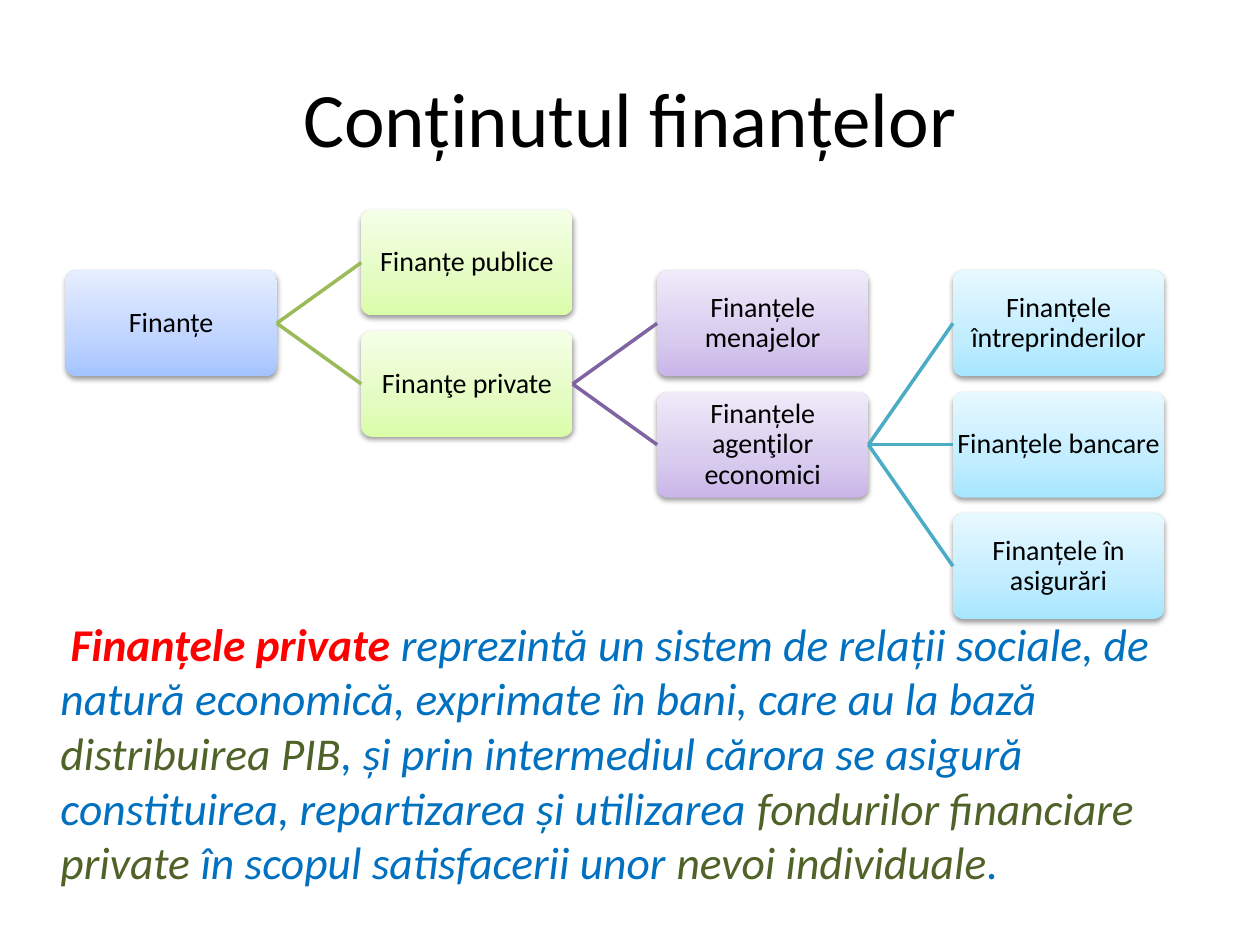
from copy import deepcopy

from lxml.etree import SubElement
from pptx import Presentation
from pptx.dml.color import RGBColor
from pptx.enum.shapes import MSO_CONNECTOR, MSO_SHAPE
from pptx.enum.text import MSO_ANCHOR, MSO_AUTO_SIZE, PP_ALIGN
from pptx.oxml.ns import qn
from pptx.util import Inches, Pt

BLACK = RGBColor(0x00, 0x00, 0x00)
RED = RGBColor(0xFF, 0x00, 0x00)
BLUE = RGBColor(0x00, 0x70, 0xC0)
OLIVE = RGBColor(0x4F, 0x62, 0x28)

GRADIENTS = [
    [RGBColor(0xA4, 0xC4, 0xFF), RGBColor(0xBF, 0xD4, 0xFF), RGBColor(0xE6, 0xEE, 0xFF)],
    [RGBColor(0xDA, 0xFD, 0xA7), RGBColor(0xE4, 0xFC, 0xC2), RGBColor(0xF5, 0xFF, 0xE7)],
    [RGBColor(0xC9, 0xB5, 0xE8), RGBColor(0xD8, 0xCB, 0xEE), RGBColor(0xF0, 0xEA, 0xF9)],
    [RGBColor(0xA7, 0xE6, 0xFF), RGBColor(0xC1, 0xED, 0xFF), RGBColor(0xE7, 0xF8, 0xFF)],
]
LINKS = [None, RGBColor(0x9B, 0xBB, 0x59), RGBColor(0x80, 0x64, 0xA2),
         RGBColor(0x4B, 0xAC, 0xC6)]

TREE = [
    ("Finanțe", 0, 1, None),
    ("Finanțe publice", 1, 0, 0),
    ("Finanţe private", 1, 2, 0),
    ("Finanțele menajelor", 2, 1, 2),
    ("Finanțele agenţilor economici", 2, 3, 2),
    ("Finanțele întreprinderilor", 3, 1, 4),
    ("Finanțele bancare", 3, 3, 4),
    ("Finanțele în asigurări", 3, 5, 4),
]

DEFINITION = [
    ("Finanțele private ", RED, True),
    ("reprezintă un sistem de relații sociale, de natură economică, exprimate în bani, "
     "care au la bază ", BLUE, False),
    ("distribuirea PIB", OLIVE, False),
    (", și prin intermediul cărora se asigură constituirea, repartizarea și utilizarea ",
     BLUE, False),
    ("fondurilor financiare private ", OLIVE, False),
    ("în scopul satisfacerii unor ", BLUE, False),
    ("nevoi individuale", OLIVE, False),
    (".", BLUE, False),
]


def add_text(p, text, size, color=BLACK, bold=False, italic=False):
    """Append a formatted run to a paragraph."""
    r = p.add_run()
    r.text = text
    r.font.name = "Calibri"
    r.font.size = Pt(size)
    r.font.bold = bold
    r.font.italic = italic
    r.font.color.rgb = color


def place(sp, box):
    """Move a shape to a left, top, width, height box."""
    sp.left, sp.top, sp.width, sp.height = (int(v) for v in box)


def add_shadow(sp):
    """Give a shape a soft shadow straight below it."""
    sp.shadow.inherit = False
    effects = sp._element.spPr.find(qn("a:effectLst"))
    shadow = SubElement(effects, qn("a:outerShdw"), blurRad=str(Pt(3.1)),
                        dist=str(Pt(1.6)), dir="5400000", rotWithShape="0")
    color = SubElement(shadow, qn("a:srgbClr"), val="000000")
    SubElement(color, qn("a:alpha"), val="38000")


def fill_gradient(sp, colors):
    """Fill a shape with three colours running from bottom to top."""
    sp.fill.gradient()
    sp.fill.gradient_angle = 90
    stops = sp._element.spPr.find(qn("a:gradFill")).find(qn("a:gsLst"))
    stops.insert(1, deepcopy(stops[0]))
    for stop, position, color in zip(sp.fill.gradient_stops, (0, 0.35, 1), colors):
        stop.position = position
        stop.color.rgb = color


def add_node(s, box, text, colors):
    """Draw one labelled node of the tree."""
    sp = s.shapes.add_shape(MSO_SHAPE.ROUNDED_RECTANGLE, *(int(v) for v in box))
    sp.adjustments[0] = 0.1
    fill_gradient(sp, colors)
    sp.line.fill.background()
    add_shadow(sp)
    tf = sp.text_frame
    tf.word_wrap = True
    tf.vertical_anchor = MSO_ANCHOR.MIDDLE
    tf.margin_left = tf.margin_right = tf.margin_top = tf.margin_bottom = Inches(0.01)
    p = tf.paragraphs[0]
    p.alignment = PP_ALIGN.CENTER
    p.line_spacing = 0.9
    add_text(p, text, 16)
    return sp


def add_link(s, parent, child, color):
    """Join a parent's right side to a child's left side."""
    link = s.shapes.add_connector(MSO_CONNECTOR.STRAIGHT, 0, 0, 0, 0)
    link.begin_connect(parent, 3)
    link.end_connect(child, 1)
    link.line.color.rgb = color
    link.line.width = Pt(2)
    SubElement(link._element.spPr, qn("a:effectLst"))


def add_tree(s, box):
    """Lay the tree out in four columns and six half-step rows."""
    left, top, width, height = box
    w, h = width / 5.2, height / 3.875
    nodes = []
    for text, col, row, parent in TREE:
        node_box = (left + 1.4 * w * col, top + 0.575 * h * row, w, h)
        nodes.append(add_node(s, node_box, text, GRADIENTS[col]))
        if parent is not None:
            add_link(s, nodes[parent], nodes[-1], LINKS[col])


def add_title(s, box):
    """Set the slide title."""
    sp = s.shapes.title
    place(sp, box)
    tf = sp.text_frame
    tf.vertical_anchor = MSO_ANCHOR.MIDDLE
    p = tf.paragraphs[0]
    p.alignment = PP_ALIGN.CENTER
    add_text(p, "Conținutul finanțelor", 44)


def add_definition(s, box):
    """Set the definition in the body placeholder."""
    sp = s.placeholders[1]
    place(sp, box)
    tf = sp.text_frame
    tf.word_wrap = True
    tf.auto_size = MSO_AUTO_SIZE.NONE
    p = tf.paragraphs[0]
    p.space_before = Pt(0)
    pPr = p._p.get_or_add_pPr()
    pPr.set("marL", str(Inches(0.38)))
    pPr.set("indent", str(Inches(0.08)))
    SubElement(pPr, qn("a:buNone"))
    for text, color, bold in DEFINITION:
        add_text(p, text, 26, color=color, bold=bold, italic=True)


def main():
    """Build and save the slide."""
    prs = Presentation()
    prs.slide_width, prs.slide_height = Inches(10), Inches(7.5)
    W, H = prs.slide_width, prs.slide_height
    s = prs.slides.add_slide(prs.slide_layouts[1])
    add_tree(s, (0.052 * W, 0.222 * H, 0.872 * W, 0.433 * H))
    add_title(s, (0.05 * W, 0.04 * H, 0.9 * W, H / 6))
    add_definition(s, (0, 0.645 * H, 0.967 * W, 0.31 * H))
    prs.save("out.pptx")


if __name__ == "__main__":
    main()
